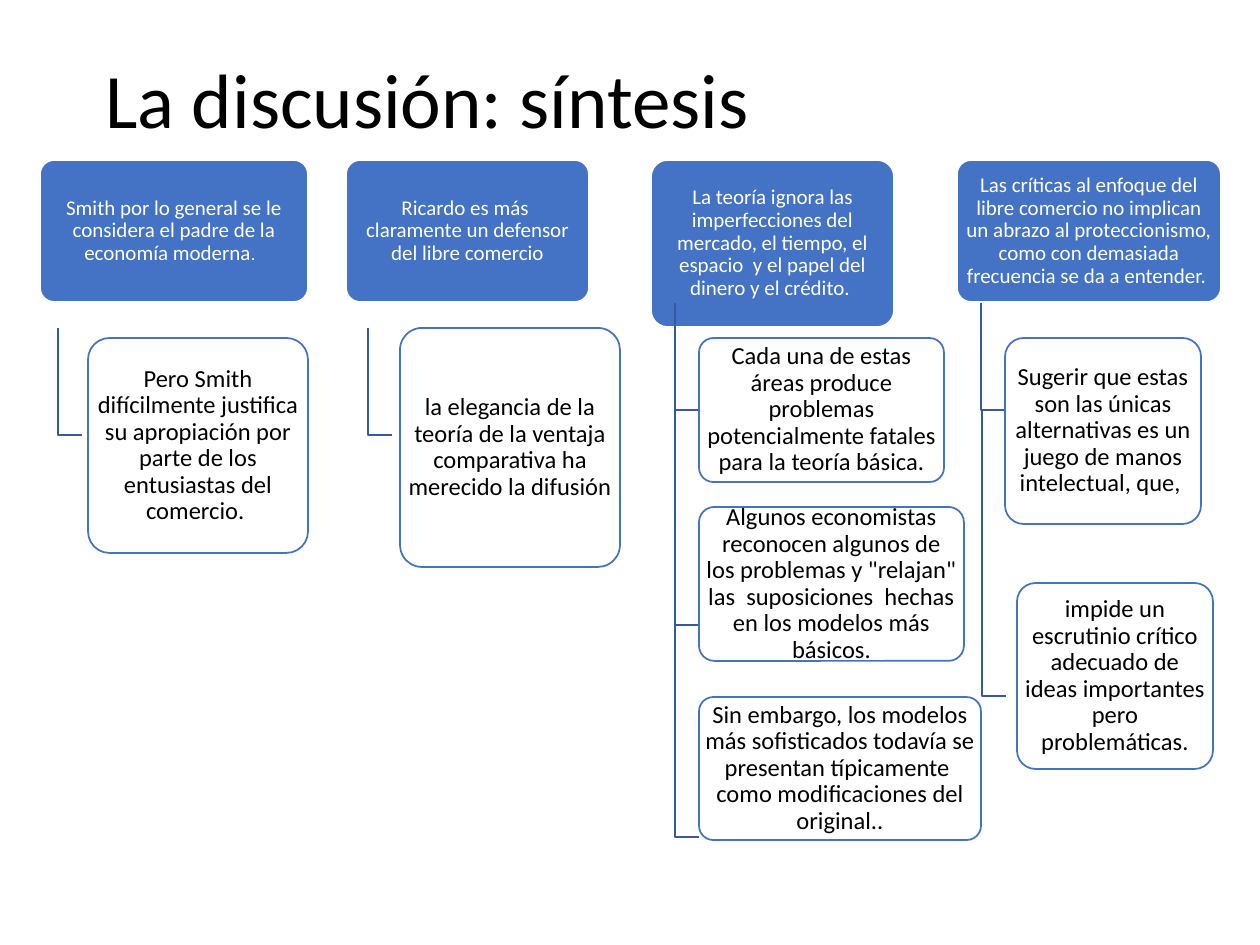
from lxml import etree
from pptx import Presentation
from pptx import util as u
from pptx.dml.color import RGBColor
from pptx.enum import shapes, text
from pptx.oxml.ns import qn

SCALE = 914400 / 126
BLUE, DARK, WHITE, BLACK = "4472C4", "365B9D", "FFFFFF", "000000"
FACE = "Calibri"
ROUND = 0.1


def px(n):
    return u.Emu(round(n * SCALE))


def tint(code):
    return RGBColor.from_string(code)


def apply(obj, vals):
    for key, val in vals.items():
        setattr(obj, key, val)


class Board:
    head = dict(fill=BLUE, line=WHITE, ink=WHITE, size=12)
    note = dict(fill=WHITE, line=BLUE, ink=BLACK, size=14, alpha=90)

    def __init__(self, slide):
        self.slide = slide

    def label(self, shape, runs, ink, align, frame):
        body = shape.text_frame
        apply(body, dict(word_wrap=True, vertical_anchor=text.MSO_ANCHOR.MIDDLE, **frame))
        para = body.paragraphs[0]
        apply(para, dict(alignment=align, line_spacing=0.9))
        for words, size in runs:
            run = para.add_run()
            run.text = words
            apply(run.font, dict(name=FACE, size=u.Pt(size)))
            run.font.color.rgb = tint(ink)

    def stroke(self, shape, code):
        shape.shadow.inherit = False
        shape.line.color.rgb = tint(code)
        shape.line.width = u.Pt(1)

    def title(self, words, *area):
        shape = self.slide.shapes.add_textbox(*map(px, area))
        self.label(shape, [(words, 44)], BLACK, text.PP_ALIGN.LEFT, {})

    def card(self, look, area, words, tail=None):
        shape = self.slide.shapes.add_shape(
            shapes.MSO_SHAPE.ROUNDED_RECTANGLE, *map(px, area))
        shape.adjustments[0] = ROUND
        shape.fill.solid()
        shape.fill.fore_color.rgb = tint(look["fill"])
        if "alpha" in look:
            node = shape.element.spPr.find(qn("a:solidFill"))[0]
            etree.SubElement(node, qn("a:alpha")).set("val", str(look["alpha"] * 1000))
        self.stroke(shape, look["line"])
        curve = round(0.29 * ROUND * min(area[2:]))
        side, edge = px(max(0, 6 - curve)), px(max(0, 5 - curve))
        frame = dict(margin_left=side, margin_right=side, margin_top=edge, margin_bottom=edge)
        runs = [(words, look["size"])] + ([tail] if tail else [])
        self.label(shape, runs, look["ink"], text.PP_ALIGN.CENTER, frame)

    def elbow(self, left, top, foot):
        pen = self.slide.shapes.build_freeform(left, top, scale=SCALE)
        pen.add_line_segments([(left, foot), (left + 24, foot)], close=False)
        shape = pen.convert_to_shape()
        shape.fill.background()
        self.stroke(shape, DARK)


COLUMNS = [
    ((40, 160, 268, 142),
     ("Smith por lo general se le considera el padre de la economía moderna", (".  ", 10.5)),
     [((58, 328, 435), (88, 338, 220, 215),
       "Pero Smith difícilmente justifica su apropiación por parte de los entusiastas del comercio. ")]),
    ((346, 160, 243, 142),
     ("Ricardo es más  claramente un defensor del libre comercio",),
     [((368, 328, 435), (400, 328, 220, 239),
       "la elegancia de la teoría de la ventaja comparativa ha merecido la difusión")]),
    ((651, 160, 243, 167),
     ("La teoría ignora las imperfecciones del mercado, el tiempo, el espacio  y el papel "
      "del dinero y el crédito. ",),
     [((675, 303, 410), (699, 338, 245, 144),
       "Cada una de estas áreas produce problemas potencialmente fatales  para la teoría básica. "),
      ((675, 339, 625), (699, 507, 265, 154),
       "Algunos economistas reconocen algunos de los problemas y \"relajan\" las  suposiciones  "
       "hechas en los modelos más básicos."),
      ((675, 372, 837), (699, 697, 282, 143),
       "Sin embargo, los modelos más sofisticados todavía se presentan típicamente  como "
       "modificaciones del original..")]),
    ((957, 160, 264, 142),
     ("Las críticas al enfoque del libre comercio no implican un abrazo al proteccionismo, "
      "como con demasiada frecuencia se da a entender. ",),
     [((981, 303, 410), (1005, 338, 196, 186),
       "Sugerir que estas son las únicas alternativas es un juego de manos intelectual, que, "),
      ((982, 410, 696), (1017, 583, 196, 186),
       "impide un escrutinio crítico adecuado de ideas importantes pero problemáticas.")]),
]


def main():
    deck = Presentation()
    apply(deck, dict(slide_width=px(1260), slide_height=px(945)))
    board = Board(deck.slides.add_slide(deck.slide_layouts[6]))
    board.title("La discusión: síntesis", 93, 50, 1081, 108)
    for area, words, notes in COLUMNS:
        board.card(board.head, area, *words)
        for bend, place, remark in notes:
            board.elbow(*bend)
            board.card(board.note, place, remark)
    deck.save("out.pptx")


if __name__ == "__main__":
    main()
